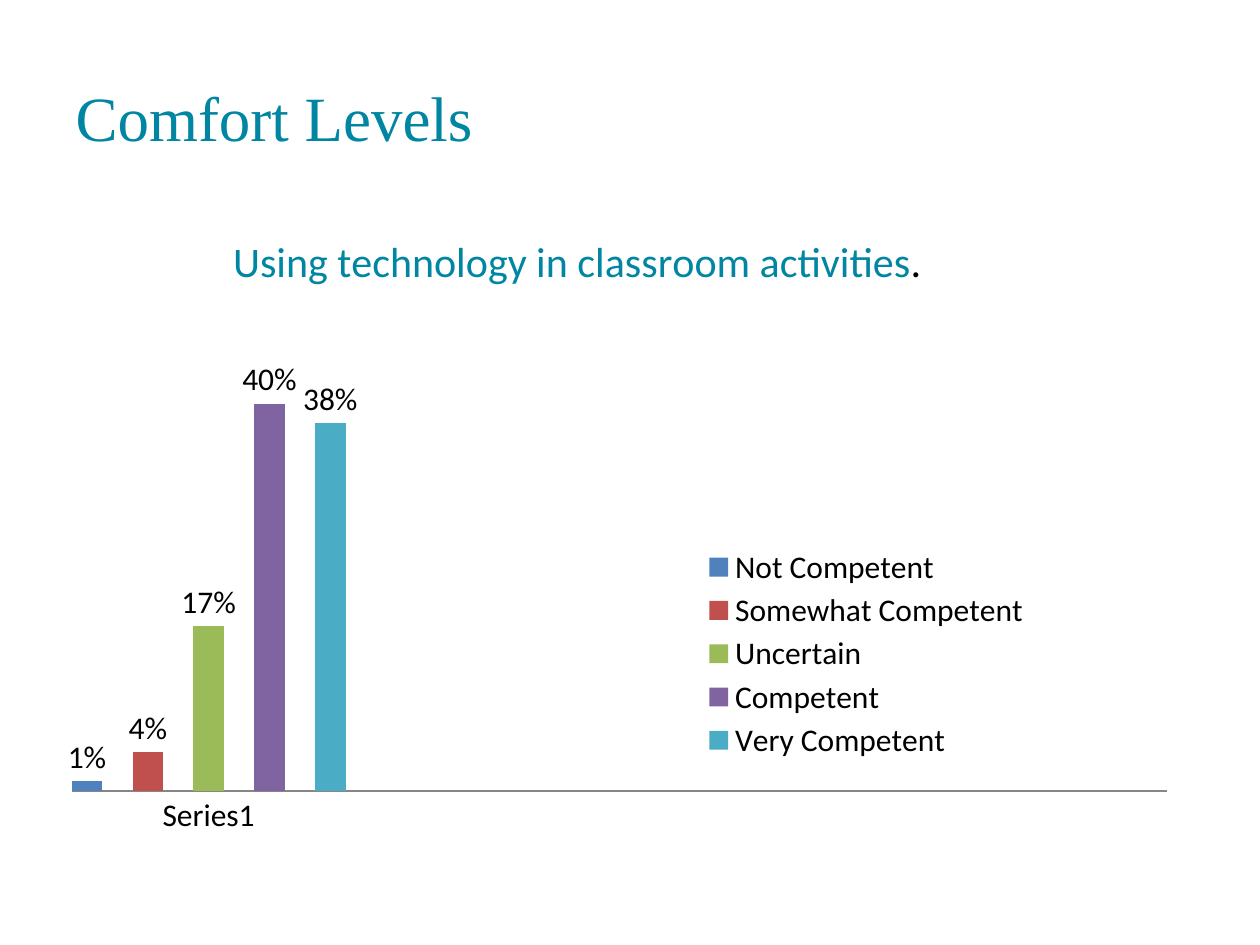
from lxml import etree
from pptx import Presentation
from pptx.chart.data import CategoryChartData
from pptx.dml.color import RGBColor
from pptx.enum import chart as kinds, text
from pptx.util import Inches, Pt

TEAL = RGBColor(0x00, 0x85, 0xA2)
BLACK = RGBColor(0, 0, 0)
GREY = RGBColor(0x86, 0x86, 0x86)
WIDE, HIGH = 9, 4.95  # chart size in inches
NS = "http://schemas.openxmlformats.org/drawingml/2006/chart"

LEVELS = [
    ("Not Competent", 0.01, RGBColor(0x4F, 0x81, 0xBD)),
    ("Somewhat Competent", 0.04, RGBColor(0xC0, 0x50, 0x4D)),
    ("Uncertain", 0.17, RGBColor(0x9B, 0xBB, 0x59)),
    ("Competent", 0.40, RGBColor(0x80, 0x64, 0xA2)),
    ("Very Competent", 0.38, RGBColor(0x4B, 0xAC, 0xC6)),
]


def place(part, index, x, y, w=None, h=None, inner=False):
    """Give a chart part a manual layout, in inches from the chart's corner."""
    for old in part.findall(f"{{{NS}}}layout"):
        part.remove(old)
    layout = etree.Element(f"{{{NS}}}layout")
    manual = etree.SubElement(layout, f"{{{NS}}}manualLayout")
    rows = [("layoutTarget", "inner")] if inner else []
    rows += [("xMode", "edge"), ("yMode", "edge"), ("x", x / WIDE), ("y", y / HIGH)]
    if w:
        rows += [("w", w / WIDE), ("h", h / HIGH)]
    for tag, val in rows:
        etree.SubElement(manual, f"{{{NS}}}{tag}").set("val", str(val))
    part.insert(index, layout)


prs = Presentation()
prs.slide_width, prs.slide_height = Inches(10), Inches(7.5)
slide = prs.slides.add_slide(prs.slide_layouts[5])

title = slide.shapes.title
title.left, title.top = Inches(0.5), Inches(0.3)
title.width, title.height = Inches(8.21), Inches(1.25)
title.text_frame.vertical_anchor = text.MSO_ANCHOR.MIDDLE
para = title.text_frame.paragraphs[0]
para.alignment = text.PP_ALIGN.LEFT
run = para.add_run()
run.text = "Comfort Levels"
run.font.name, run.font.size = "Times New Roman", Pt(36)
run.font.color.rgb = TEAL

data = CategoryChartData(number_format="0%")
data.categories = ["Series1", "", "", ""]
for name, share, _ in LEVELS:
    data.add_series(name, [share, None, None, None])
chart = slide.shapes.add_chart(
    kinds.XL_CHART_TYPE.COLUMN_CLUSTERED,
    Inches(0.42), Inches(1.67), Inches(WIDE), Inches(HIGH), data).chart
chart.font.name, chart.font.size = "Calibri", Pt(18)
chart.font.color.rgb = BLACK

head = chart.chart_title.text_frame.paragraphs[0]
for words, color in [("Using technology in classroom activities", TEAL), (".", BLACK)]:
    run = head.add_run()
    run.text = words
    run.font.name, run.font.size, run.font.bold = "Calibri", Pt(24), False
    run.font.color.rgb = color

plot = chart.plots[0]
plot.vary_by_categories = False
plot.gap_width, plot.overlap = 0, -100
plot.has_data_labels = True
labels = plot.data_labels
labels.show_value = True
labels.number_format, labels.number_format_is_linked = "0%", False
labels.position = kinds.XL_LABEL_POSITION.OUTSIDE_END
for series, (_, _, color) in zip(plot.series, LEVELS):
    series.format.fill.solid()
    series.format.fill.fore_color.rgb = color

chart.category_axis.major_tick_mark = kinds.XL_TICK_MARK.NONE
chart.category_axis.format.line.color.rgb = GREY
axis = chart.value_axis
axis.visible = False
axis.has_major_gridlines = False
axis.minimum_scale, axis.maximum_scale = 0, 0.45

chart.has_legend = True
chart.legend.position = kinds.XL_LEGEND_POSITION.BOTTOM
chart.legend.include_in_layout = False

root = chart.element
place(root.xpath("c:chart/c:title")[0], 1, 1.4, 0.17)
place(root.xpath("c:chart/c:plotArea")[0], 0, 0.15, 1.15, 8.69, 3.46, inner=True)
place(root.xpath("c:chart/c:legend")[0], 1, 5.13, 2.64, 2.65, 1.76)

prs.save("out.pptx")
